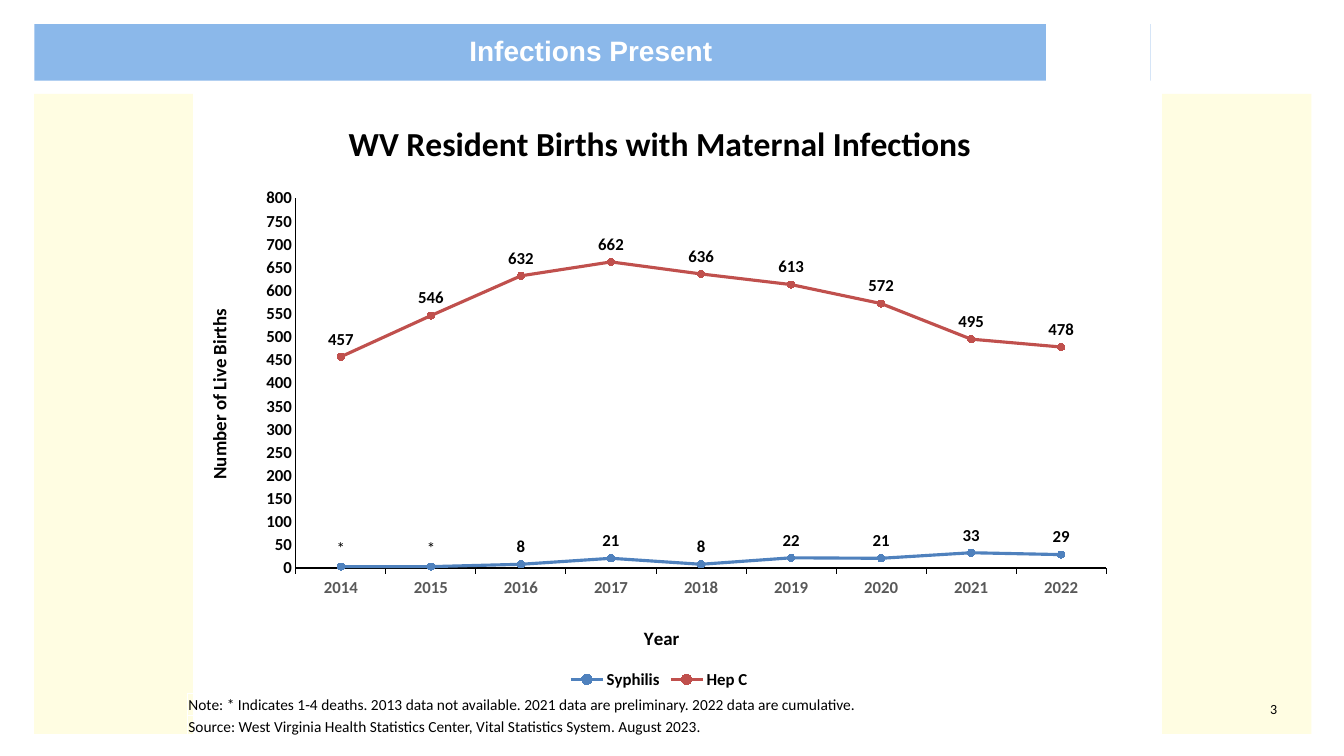
from lxml import etree
from pptx import Presentation
from pptx.chart.data import CategoryChartData
from pptx.dml.color import RGBColor
from pptx.enum import chart as ch, shapes, text
from pptx.oxml import parse_xml
from pptx.oxml.ns import nsdecls, qn
from pptx.util import Pt

WHITE = RGBColor(0xFF, 0xFF, 0xFF)
BLACK = RGBColor(0, 0, 0)
GREY = RGBColor(0x59, 0x59, 0x59)
CREAM = RGBColor(0xFF, 0xFD, 0xE2)
BAND = RGBColor(0x8B, 0xB8, 0xEA)
BLUE = RGBColor(0x4F, 0x81, 0xBD)
RED = RGBColor(0xC0, 0x50, 0x4D)

YEARS = [str(y) for y in range(2014, 2023)]
SUPPRESSED = None  # a withheld count of 1-4, labelled with an asterisk
STAND_IN = 3  # the same plotting height for every withheld count
INFECTIONS = [
    ("Syphilis", (SUPPRESSED, SUPPRESSED, 8, 21, 8, 22, 21, 33, 29), BLUE),
    ("Hep C", (457, 546, 632, 662, 636, 613, 572, 495, 478), RED),
]
NOTES = [
    ("Note: * Indicates 1-4 deaths. 2013 data not available. "
     "2021 data are preliminary. 2022 data are cumulative.", 15.8, text.MSO_ANCHOR.MIDDLE),
    ("Source: West Virginia Health Statistics Center, Vital Statistics System. "
     "August 2023.", 15.1, text.MSO_ANCHOR.BOTTOM),
]


def style(font, size, color=BLACK, bold=False, name="Calibri"):
    font.size, font.bold, font.name = Pt(size), bold, name
    font.color.rgb = color


def add_rect(slide, box, fill, line=None):
    sp = slide.shapes.add_shape(shapes.MSO_SHAPE.RECTANGLE, *map(Pt, box))
    sp.shadow.inherit = False
    sp.fill.solid()
    sp.fill.fore_color.rgb = fill
    if line is None:
        sp.line.fill.background()
    else:
        sp.line.color.rgb = line
        sp.line.width = Pt(0.75)


def add_label(slide, box, wording, align, anchor, **font):
    sp = slide.shapes.add_textbox(*map(Pt, box))
    tf = sp.text_frame
    tf.word_wrap = True
    tf.vertical_anchor = anchor
    tf.margin_left = tf.margin_right = tf.margin_top = tf.margin_bottom = 0
    p = tf.paragraphs[0]
    p.text = wording
    p.alignment = align
    style(p.font, **font)


def add_backdrop(slide, box):
    """Cream panel with a white sheet for the chart."""
    x, y, w, h = box
    add_rect(slide, box, CREAM)
    add_rect(slide, (x + 113.7, y - 5.1, 691.2, 467.3), WHITE, WHITE)


def add_header(slide, box):
    """Blue title band with a white notch at its right end."""
    x, y, w, h = box
    add_rect(slide, box, BAND)
    add_label(slide, (x, y + 0.7, w - 2, 36), "Infections Present",
              text.PP_ALIGN.CENTER, text.MSO_ANCHOR.MIDDLE,
              size=20, color=WHITE, bold=True, name="Arial")
    add_rect(slide, (x + w - 74.5, y - 5, 74, 51), WHITE, WHITE)


def place(element, x, y, w=None, h=None):
    """Set a manual layout, in fractions of the chart, on a title or plot area."""
    for old in element.findall(qn("c:layout")):
        element.remove(old)
    parts = [("xMode", "edge"), ("yMode", "edge"), ("x", x), ("y", y)]
    if w:
        parts = [("layoutTarget", "inner")] + parts + [("w", w), ("h", h)]
    layout = etree.Element(qn("c:layout"))
    manual = etree.SubElement(layout, qn("c:manualLayout"))
    for tag, value in parts:
        etree.SubElement(manual, qn("c:" + tag)).set("val", str(value))
    element.insert(0 if element.find(qn("c:tx")) is None else 1, layout)


def set_title(title, wording, size, x, y):
    p = title.text_frame.paragraphs[0]
    p.text = wording
    style(p.font, size, bold=True)
    place(title._element, x, y)


def style_axis(axis, color, tick):
    axis.has_major_gridlines = False
    axis.major_tick_mark = tick
    axis.minor_tick_mark = ch.XL_TICK_MARK.NONE
    axis.format.line.color.rgb = BLACK
    axis.format.line.width = Pt(0.75)
    style(axis.tick_labels.font, 12, color, True)


def style_series(ser, values, color):
    ser.smooth = False
    ser.format.line.color.rgb = color
    ser.format.line.width = Pt(2.25)
    ser.marker.style = ch.XL_MARKER_STYLE.CIRCLE
    ser.marker.size = 5
    ser.marker.format.fill.solid()
    ser.marker.format.fill.fore_color.rgb = color
    ser.marker.format.line.color.rgb = color
    labels = ser.data_labels
    labels.show_value = True
    labels.position = ch.XL_LABEL_POSITION.ABOVE
    style(labels.font, 12, bold=True)
    for i, value in enumerate(values):
        if value is SUPPRESSED:
            label = ser.points[i].data_label
            p = label.text_frame.paragraphs[0]
            p.text = "*"
            style(p.font, 12)
            label.position = ch.XL_LABEL_POSITION.ABOVE


def add_births_chart(slide, box):
    data = CategoryChartData()
    data.categories = YEARS
    for name, values, _ in INFECTIONS:
        data.add_series(name, [STAND_IN if v is SUPPRESSED else v for v in values])
    chart = slide.shapes.add_chart(ch.XL_CHART_TYPE.LINE_MARKERS, *map(Pt, box), data).chart
    style(chart.font, 10)
    plot = chart.plots[0]
    plot.vary_by_categories = False
    for ser, (_, values, color) in zip(plot.series, INFECTIONS):
        style_series(ser, values, color)

    years, births = chart.category_axis, chart.value_axis
    style_axis(years, GREY, ch.XL_TICK_MARK.OUTSIDE)
    style_axis(births, BLACK, ch.XL_TICK_MARK.NONE)
    births.minimum_scale, births.maximum_scale, births.major_unit = 0, 800, 50

    set_title(chart.chart_title, "WV Resident Births with Maternal Infections", 24, 0.16, 0.03)
    set_title(years.axis_title, "Year", 13.5, 0.48, 0.88)
    set_title(births.axis_title, "Number of Live Births", 13.5, 0.01, 0.35)
    body = births.axis_title.text_frame._txBody.find(qn("a:bodyPr"))
    body.set("rot", "-5400000")
    body.set("vert", "horz")
    place(chart._chartSpace.find(".//" + qn("c:plotArea")), 0.11, 0.17, 0.87, 0.62)

    chart.has_legend = True
    chart.legend.position = ch.XL_LEGEND_POSITION.BOTTOM
    chart.legend.include_in_layout = False
    style(chart.legend.font, 12, bold=True)


def add_notes_table(slide, box):
    table = slide.shapes.add_table(len(NOTES), 1, *map(Pt, box)).table
    table.first_row = table.horz_banding = False
    for row, (wording, height, anchor) in enumerate(NOTES):
        table.rows[row].height = Pt(height)
        cell = table.cell(row, 0)
        cell.margin_left = cell.margin_right = cell.margin_top = Pt(0.7)
        cell.margin_bottom = 0
        cell.vertical_anchor = anchor
        p = cell.text_frame.paragraphs[0]
        p.text = wording
        style(p.font, 11)
        for side in ("lnL", "lnR", "lnT", "lnB"):
            cell._tc.get_or_add_tcPr().append(parse_xml(
                f'<a:{side} {nsdecls("a")} w="12700"><a:solidFill>'
                f'<a:srgbClr val="{WHITE}"/></a:solidFill></a:{side}>'))
        cell.fill.background()


def main():
    prs = Presentation()
    prs.slide_width, prs.slide_height = Pt(960), Pt(540)
    slide = prs.slides.add_slide(prs.slide_layouts[6])
    add_backdrop(slide, (24.5, 67, 912.3, 457.2))
    add_header(slide, (24.5, 17.3, 797.2, 40.3))
    add_label(slide, (875.5, 500.4, 36.7, 13.7), "3", text.PP_ALIGN.RIGHT,
              text.MSO_ANCHOR.TOP, size=10)
    add_births_chart(slide, (138.2, 69.1, 665.3, 426.2))
    add_notes_table(slide, (133.9, 495.4, 650.2, 30.9))
    prs.save("out.pptx")


if __name__ == "__main__":
    main()
